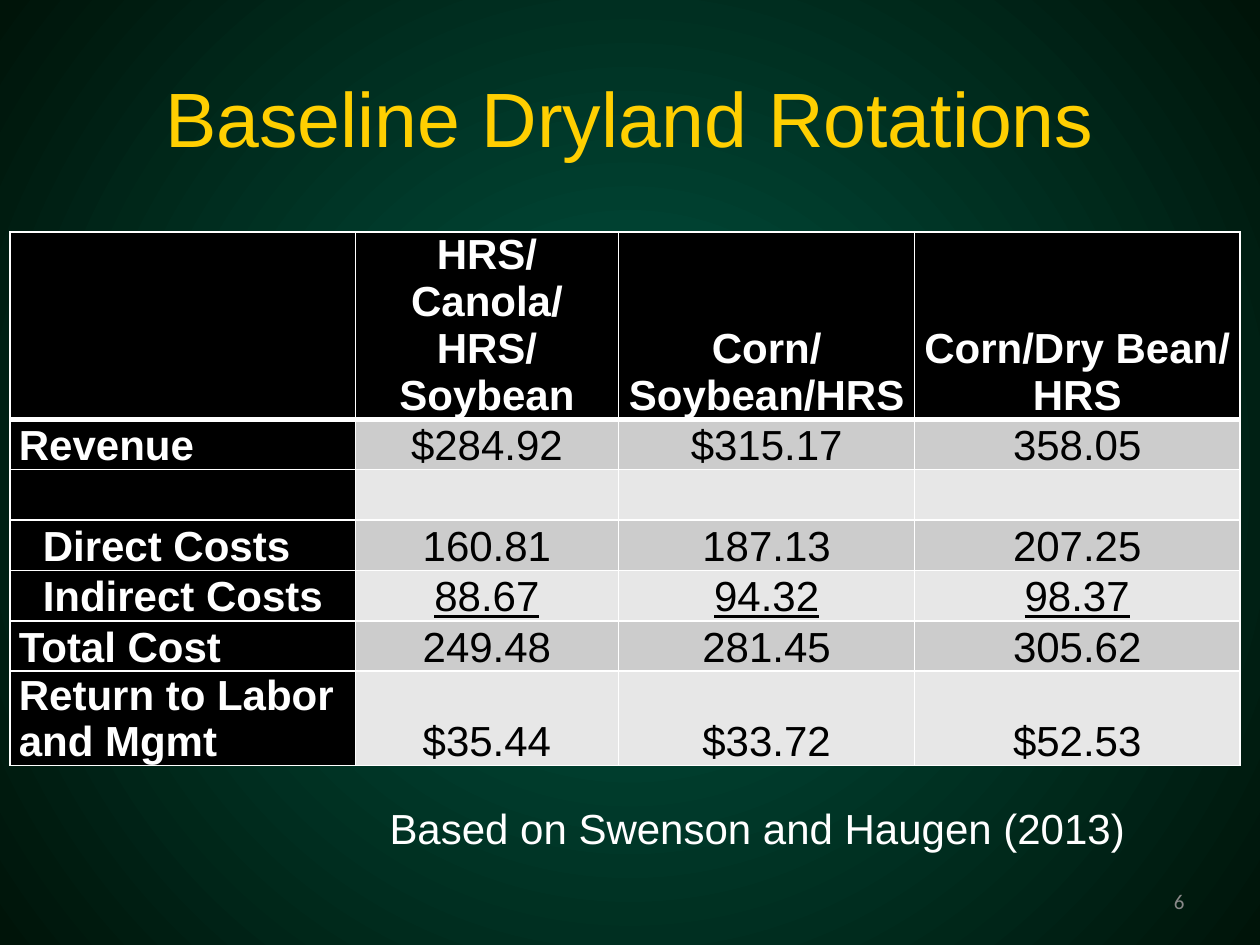
from pptx import Presentation
from pptx.dml.color import RGBColor
from pptx.enum.text import MSO_ANCHOR, PP_ALIGN
from pptx.oxml import parse_xml
from pptx.oxml.ns import nsdecls, qn
from pptx.util import Inches, Pt


def paint(hue):
    return RGBColor.from_string(hue)


def write(para, text, size, hue, align, face="Arial", bold=False):
    para.alignment = align
    run = para.add_run()
    run.text = text
    run.font.size = Pt(size)
    run.font.name = face
    run.font.bold = bold
    run.font.color.rgb = paint(hue)
    return run


deck = Presentation()
deck.slide_width, deck.slide_height = Inches(10), Inches(7.5)
slide = deck.slides.add_slide(deck.slide_layouts[5])

# Background: round gradient from the centre
back = slide.background.fill
back.gradient()
for stop, hue in zip(back.gradient_stops, ("005643", "001409")):
    stop.color.rgb = paint(hue)
grad = slide.background._cSld.find(".//" + qn("a:gradFill"))
grad.replace(grad.find(qn("a:lin")), parse_xml(
    f'<a:path {nsdecls("a")} path="circle">'
    '<a:fillToRect l="50000" t="50000" r="50000" b="50000"/></a:path>'))

# Title
title = slide.shapes.title
title.left, title.top = Inches(0.5), Inches(0.3)
title.width, title.height = Inches(9), Inches(1.25)
title.text_frame.vertical_anchor = MSO_ANCHOR.MIDDLE
write(title.text_frame.paragraphs[0], "Baseline Dryland Rotations", 44,
      "FFCF01", PP_ALIGN.CENTER)

# Table of costs and returns
data = [
    ("", "HRS/Canola/HRS/ Soybean", "Corn/ Soybean/HRS", "Corn/Dry Bean/ HRS"),
    ("Revenue", "$284.92", "$315.17", "358.05"),
    ("", "", "", ""),
    ("Direct Costs", "160.81", "187.13", "207.25"),
    ("Indirect Costs", "88.67", "94.32", "98.37"),
    ("Total Cost", "249.48", "281.45", "305.62"),
    ("Return to Labor and Mgmt", "$35.44", "$33.72", "$52.53"),
]
wide = (2.74, 2.09, 2.35, 2.58)
high = (1.2, 0.4, 0.4, 0.4, 0.4, 0.4, 0.75)
table = slide.shapes.add_table(len(high), len(wide), Inches(0.08), Inches(1.84),
                               Inches(sum(wide)), Inches(sum(high))).table
for col, size in zip(table.columns, wide):
    col.width = Inches(size)
for row, size in zip(table.rows, high):
    row.height = Inches(size)

for r, line in enumerate(data):
    for c, text in enumerate(line):
        cell = table.cell(r, c)
        head = r == 0 or c == 0
        # White borders, thick under the header row
        thick = {"B": r == 0, "T": r == 1}
        props = cell._tc.get_or_add_tcPr()
        for side in "LRTB":
            width = Pt(3 if thick.get(side) else 1)
            props.append(parse_xml(
                f'<a:ln{side} {nsdecls("a")} w="{width}"><a:solidFill>'
                f'<a:srgbClr val="FFFFFF"/></a:solidFill></a:ln{side}>'))
        cell.fill.solid()
        cell.fill.fore_color.rgb = paint(
            "000000" if head else "CCCCCC" if r % 2 else "E7E7E7")
        cell.vertical_anchor = MSO_ANCHOR.BOTTOM
        cell.margin_left = Inches(0.26 if c == 0 and r in (3, 4) else 0.07)
        cell.margin_right = Inches(0.07)
        cell.margin_top = cell.margin_bottom = 0
        if text:
            run = write(cell.text_frame.paragraphs[0], text, 24,
                        "FFFFFF" if head else "000000",
                        PP_ALIGN.CENTER if c else PP_ALIGN.LEFT, bold=head)
            if r == 4 and c:
                run.font.underline = True

# Page number and source note
notes = [
    ("6", (7.17, 6.95, 2.33, 0.4), 12, "898989", PP_ALIGN.RIGHT, "Calibri",
     MSO_ANCHOR.MIDDLE),
    ("Based on Swenson and Haugen (2013)", (1.45, 6.32, 9.12, 1.25), 24,
     "FFFFFF", PP_ALIGN.CENTER, "Arial", MSO_ANCHOR.TOP),
]
for text, place, size, hue, align, face, anchor in notes:
    frame = slide.shapes.add_textbox(*map(Inches, place)).text_frame
    frame.word_wrap = True
    frame.vertical_anchor = anchor
    write(frame.paragraphs[0], text, size, hue, align, face)

deck.save("out.pptx")
